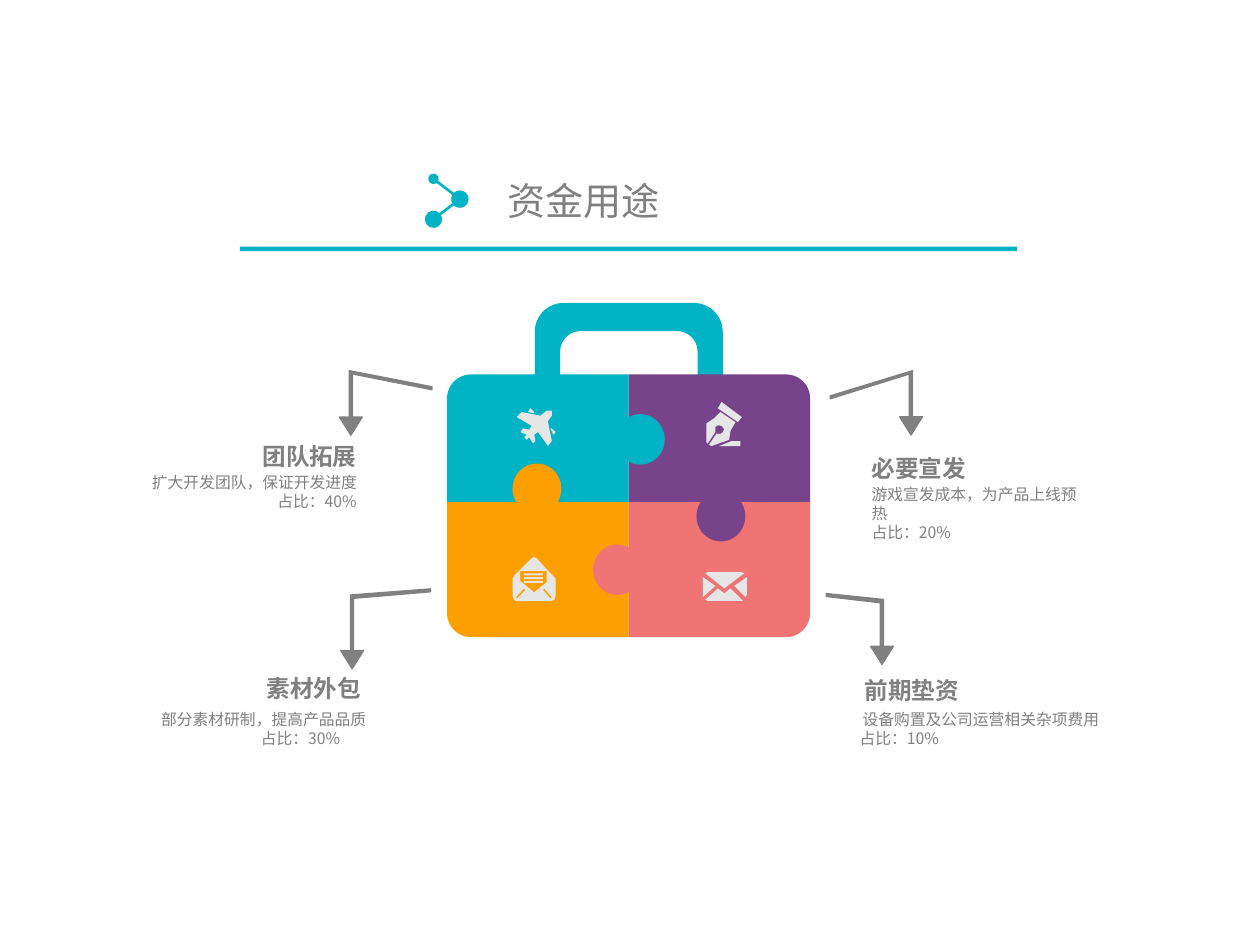
import math
from lxml import etree
from pptx import Presentation
from pptx.dml.color import RGBColor
from pptx.enum import shapes as s, text as t
from pptx.oxml import ns
from pptx.util import Pt

HUE = {"teal": "01B3C5", "plum": "77448C", "rose": "F17475",
       "gold": "FE9F00", "gray": "808080", "pale": "E7E6E6"}
SANS = "Noto Sans CJK SC"
LEFT, RIGHT = t.PP_ALIGN.LEFT, t.PP_ALIGN.RIGHT

DOTS = [((247.7, 102.2), (262.8, 113.8), "med", "lg"),
        ((262.8, 113.8), (247.7, 125.3), "lg", "lg")]

# far end, stem centre, stem top, arrowhead base
ARROWS = [((246, 336.5), 201.2, 340, 371.8),
          ((474.5, 226.2), 520.6, 211.8, 238.2),
          ((246.8, 221), 200.5, 211.8, 238.3),
          ((472.2, 339.2), 504, 342.6, 369.3)]

NOTES = [
    ("素材外包", (145.4, 381.6), LEFT, (85, 401.8, 138.2, 28.8),
     [("部分素材研制，提高产品品质", LEFT, 0), ("占比：30%", LEFT, 57)]),
    ("必要宣发", (491, 255.6), LEFT, (491, 273.6, 138.2, 40.3),
     [("游戏宣发成本，为产品上线预热", LEFT, 0), ("占比：20%", LEFT, 0)]),
    ("团队拓展", (141.8, 249.1), RIGHT, (72.7, 266.4, 138.2, 28.8),
     [("扩大开发团队，保证开发进度", RIGHT, 0), ("占比：40%", RIGHT, 0)]),
    ("前期垫资", (486, 383), RIGHT, (465.1, 401.8, 169.9, 28.8),
     [("设备购置及公司运营相关杂项费用", RIGHT, 0), ("占比：10%", LEFT, 19)]),
]

XS, YS = (255.5, 359.3, 463), (214, 286.9, 364.1)
TILES = [("plum", 1, 0), ("teal", 0, 0), ("rose", 1, 1), ("gold", 0, 1)]
KNOBS = [("rose", 338.9, 311.2), ("teal", 352, 236.7),
         ("plum", 398, 280.6), ("gold", 292.9, 264.9)]

GRID = 0.72
ICONS = [
    ((401.6, 326.9), [
        [(4, 0), (30, 0), (33, 1), (17, 13), (2, 1)],
        [(35, 4), (25, 11), (34, 20), (35, 18)],
        [(32, 23), (4, 23), (2, 22), (12, 13), (17, 17), (22, 13)],
        [(0, 20), (10, 11), (0, 4)]]),
    ((293, 318.3), [
        [(32, 15), (34, 17), (34, 31), (33, 34), (30, 35), (3, 35), (1, 34),
         (0, 31), (0, 17), (1, 15), (15, 1), (17, 0), (19, 1)],
        [(6, 11), (6, 19), (17, 28), (27, 20), (27, 11)]]
        + [[(9, y), (24, y), (24, y + 1.5), (9, y + 1.5)] for y in (13, 16, 19)]
        + [[(2.5, 32), (9, 25), (10, 26), (3.5, 33)],
           [(31, 32), (25, 25), (24, 26), (30, 33)]]),
    ((295.2, 233.3), [
        [(28, 2), (28, 6), (25, 10), (25, 11), (28, 26), (25, 30), (17, 19),
         (14, 21), (15, 26), (13, 28), (10, 23), (8, 25), (6, 23), (8, 21),
         (3, 19), (5, 16), (10, 17), (12, 14), (0, 7), (4, 3), (19, 6),
         (20, 5), (24, 2)],
        [(31, 19), (28, 16), (27, 16), (29, 21)],
        [(11, 0), (9, 3), (14, 4), (14, 3)]]),
    ((403.7, 229.7), [
        [(1, 33), (0, 32), (0, 17), (6, 13), (11, 8), (23, 16), (19, 23),
         (18, 30), (4, 35), (2, 34), (8, 25), (11, 25.5), (13, 24),
         (14, 21.5), (12, 19), (9, 18.5), (7, 20), (7, 24)],
        [(10, 35), (27, 35), (27, 31), (20, 31)],
        [(25, 16), (28, 12), (12, 0), (9, 5)]]),
]

deck = Presentation()
deck.slide_width, deck.slide_height = Pt(720), Pt(540)
page = deck.slides.add_slide(deck.slide_layouts[6]).shapes


def paint(item, hue, edge=0):
    item.shadow.inherit = False
    item.fill.solid()
    item.fill.fore_color.rgb = RGBColor.from_string(HUE[hue])
    if edge:
        item.line.color.rgb = RGBColor.from_string(HUE[hue])
        item.line.width = Pt(edge)
    else:
        item.line.fill.background()
    return item


def add(kind, box, hue):
    return paint(page.add_shape(kind, *map(Pt, box)), hue)


def draw(loops, hue, edge=0):
    loops = [[(Pt(x), Pt(y)) for x, y in loop] for loop in loops]
    pen = page.build_freeform(*loops[0][0], scale=1.0)
    for num, loop in enumerate(loops):
        if num:
            pen.move_to(*loop[0])
        pen.add_line_segments(loop[1:], close=True)
    return paint(pen.convert_to_shape(), hue, edge)


def arch(x1, x2, top, base, rad):
    turn = [math.radians(a) for a in range(0, 91, 6)]
    left = [(x1 + rad - rad * math.cos(a), top + rad - rad * math.sin(a))
            for a in turn]
    right = [(x1 + x2 - x, y) for x, y in reversed(left)]
    return [(x1, base)] + left + right + [(x2, base)]


def write(box, rows, size, face, bold=False, wrap=True, pad=(7.2, 3.6)):
    frame = page.add_textbox(*map(Pt, box)).text_frame
    frame.word_wrap = wrap
    frame.margin_left = frame.margin_right = Pt(pad[0])
    frame.margin_top = frame.margin_bottom = Pt(pad[1])
    frame.text = "\n".join(row[0] for row in rows)
    for para, (_, side, dent) in zip(frame.paragraphs, rows):
        para.alignment = side
        if dent:
            para._p.get_or_add_pPr().set("marL", str(Pt(dent)))
        font = para.runs[0].font
        font.size, font.name, font.bold = Pt(size), face, bold
        font.color.rgb = RGBColor.from_string(HUE["gray"])
        if face == SANS:
            etree.SubElement(font._element, ns.qn("a:ea"), typeface=face)


add(s.MSO_SHAPE.RECTANGLE, (137.1, 141, 444, 2.6), "teal")
write((284.4, 98.6, 98.6, 31.7), [("资金用途", LEFT, 0)], 21.8, "Arial",
      wrap=False, pad=(5.4, 2.7))

for head, tail, big, end in DOTS:
    link = page.add_connector(s.MSO_CONNECTOR.STRAIGHT, *map(Pt, head + tail))
    link.line.color.rgb = RGBColor.from_string(HUE["teal"])
    link.line.width = Pt(1.5)
    line = link.line._get_or_add_ln()
    for tag, size in (("a:headEnd", big), ("a:tailEnd", end)):
        etree.SubElement(line, ns.qn(tag), type="oval", w=size, len=size)
    etree.SubElement(link._element.spPr, ns.qn("a:effectLst"))

for (x, y), mid, top, base in ARROWS:
    half = math.copysign(0.9, x - mid)
    draw([[(x, y), (x, y + 1.7), (mid + half, top + 1.9),
           (mid + half, base + 3), (mid - half, base + 3),
           (mid - half, top)]], "gray", 0.75)
    draw([[(mid - 6.5, base), (mid + 6.5, base), (mid, base + 10.4)]],
         "gray", 0.75)

for name, spot, side, box, rows in NOTES:
    write(spot + (69.1, 23.8), [(name, side, 0)], 13.5, SANS, True, False)
    write(box, rows, 9, SANS)

draw([arch(305.6, 413, 173.1, 220, 16.5)
      + arch(320.1, 398.6, 189.2, 220, 11.7)[::-1]], "teal")

for hue, col, row in TILES:
    wide, high = XS[col + 1] - XS[col], YS[row + 1] - YS[row]
    tile = add(s.MSO_SHAPE.ROUND_1_RECTANGLE, (XS[col], YS[row], wide, high), hue)
    tile.adjustments[0] = 13.7 / high
    frame = tile._element.spPr.xfrm
    if col == 0:
        frame.set("flipH", "1")
    if row == 1:
        frame.set("flipV", "1")

for hue, x, y in KNOBS:
    add(s.MSO_SHAPE.OVAL, (x, y, 27.9, 28.8), hue)

for (x, y), loops in ICONS:
    draw([[(x + GRID * a, y + GRID * b) for a, b in loop] for loop in loops],
         "pale")

deck.save("out.pptx")
